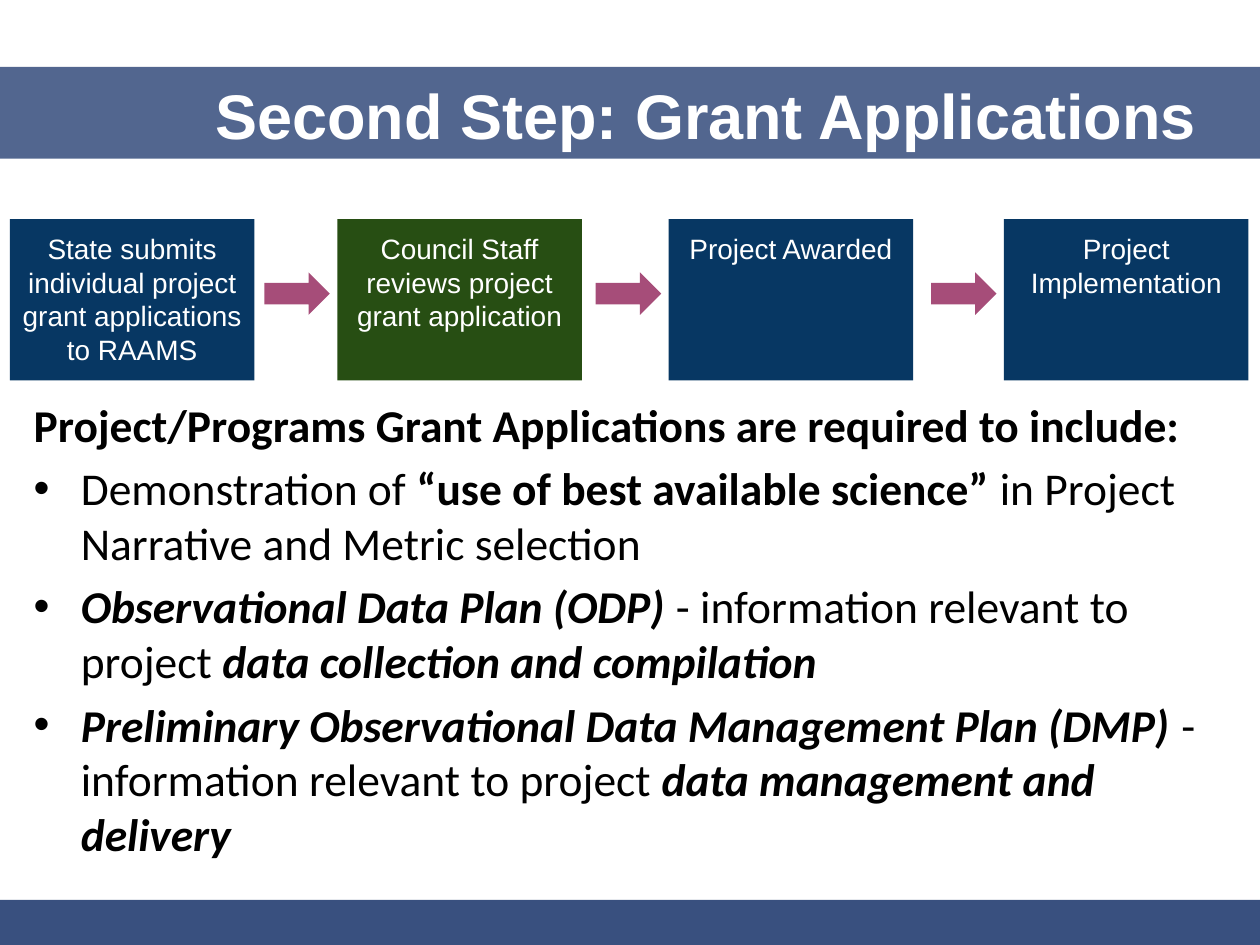
from lxml.etree import SubElement
from pptx import Presentation
from pptx.dml.color import RGBColor
from pptx.enum.shapes import MSO_SHAPE
from pptx.enum.text import MSO_ANCHOR, PP_ALIGN
from pptx.oxml.ns import qn
from pptx.util import Cm, Pt

COLORS = {
    "band": "39507F",
    "step": "073763",
    "review": "274E13",
    "arrow": "A64D79",
    "white": "FFFFFF",
    "black": "000000",
}


def add_block(preset, left, top, width, height, color):
    """Add a filled preset shape without line or shadow; lengths in cm."""
    block = slide.shapes.add_shape(preset, Cm(left), Cm(top), Cm(width), Cm(height))
    block.shadow.inherit = False
    block.fill.solid()
    block.fill.fore_color.rgb = RGBColor.from_string(COLORS[color])
    block.line.fill.background()
    return block


def add_run(paragraph, text, size=16, font="Arial", color="white", bold=False, italic=False):
    run = paragraph.add_run()
    run.text = text
    run.font.size = Pt(size)
    run.font.name = font
    run.font.bold = bold
    run.font.italic = italic
    run.font.color.rgb = RGBColor.from_string(COLORS[color])


prs = Presentation()
prs.slide_width, prs.slide_height = Cm(25.4), Cm(19.05)
slide = prs.slides.add_slide(prs.slide_layouts[6])

# Footer and title bands
add_block(MSO_SHAPE.RECTANGLE, 0, 18.14, 25.4, 0.96, "band")
title_band = add_block(MSO_SHAPE.RECTANGLE, 0, 1.35, 25.4, 1.85, "band")
band_color = title_band.fill._xPr.find(qn("a:solidFill"))[0]
SubElement(band_color, qn("a:alpha"), val="87000")

# Requirements
requirements = slide.shapes.add_textbox(Cm(0.43), Cm(7.87), Cm(24.97), Cm(9.2)).text_frame
requirements.word_wrap = True
body = {"size": 26, "font": "Calibri", "color": "black"}
strong = {"bold": True}
term = {"bold": True, "italic": True}
add_run(requirements.paragraphs[0],
        "Project/Programs Grant Applications are required to include:", **body, **strong)

bullets = [
    [("Demonstration of ", {}),
     ("“use of best available science” ", strong),
     ("in Project Narrative and Metric selection", {})],
    [("Observational Data Plan (ODP)", term),
     (" - information relevant to project ", {}),
     ("data collection and compilation", term)],
    [("Preliminary Observational Data Management Plan (DMP)", term),
     (" - information relevant to project ", {}),
     ("data management and delivery", term)],
]
for parts in bullets:
    bullet = requirements.add_paragraph()
    bullet.space_before = Pt(5.2)
    properties = bullet._p.get_or_add_pPr()
    properties.set("marL", str(Cm(0.95)))
    properties.set("indent", str(-Cm(0.95)))
    bullet_color = SubElement(properties, qn("a:buClr"))
    SubElement(bullet_color, qn("a:srgbClr"), val=COLORS["black"])
    SubElement(properties, qn("a:buFont"), typeface="Arial")
    SubElement(properties, qn("a:buChar"), char="•")
    for text, emphasis in parts:
        add_run(bullet, text, **body, **emphasis)

# Title
title = slide.shapes.add_textbox(Cm(3.07), Cm(1.42), Cm(22.33), Cm(1.78)).text_frame
title.word_wrap = True
title.vertical_anchor = MSO_ANCHOR.MIDDLE
title.paragraphs[0].alignment = PP_ALIGN.CENTER
add_run(title.paragraphs[0], "Second Step: Grant Applications", size=36, bold=True)

# Process steps
steps = [
    (0.2, "step", "State submits individual project grant applications to RAAMS"),
    (6.8, "review", "Council Staff reviews project grant application"),
    (13.48, "step", "Project Awarded"),
    (20.24, "step", "Project Implementation"),
]
for left, color, text in steps:
    step = add_block(MSO_SHAPE.RECTANGLE, left, 4.42, 4.93, 3.25, color).text_frame
    step.word_wrap = True
    step.vertical_anchor = MSO_ANCHOR.TOP
    step.margin_left = step.margin_right = step.margin_top = step.margin_bottom = Cm(0.25)
    step.paragraphs[0].alignment = PP_ALIGN.CENTER
    add_run(step.paragraphs[0], text)

for left in (5.33, 12.01, 18.77):
    add_block(MSO_SHAPE.RIGHT_ARROW, left, 5.49, 1.32, 0.86, "arrow")

prs.save("out.pptx")
